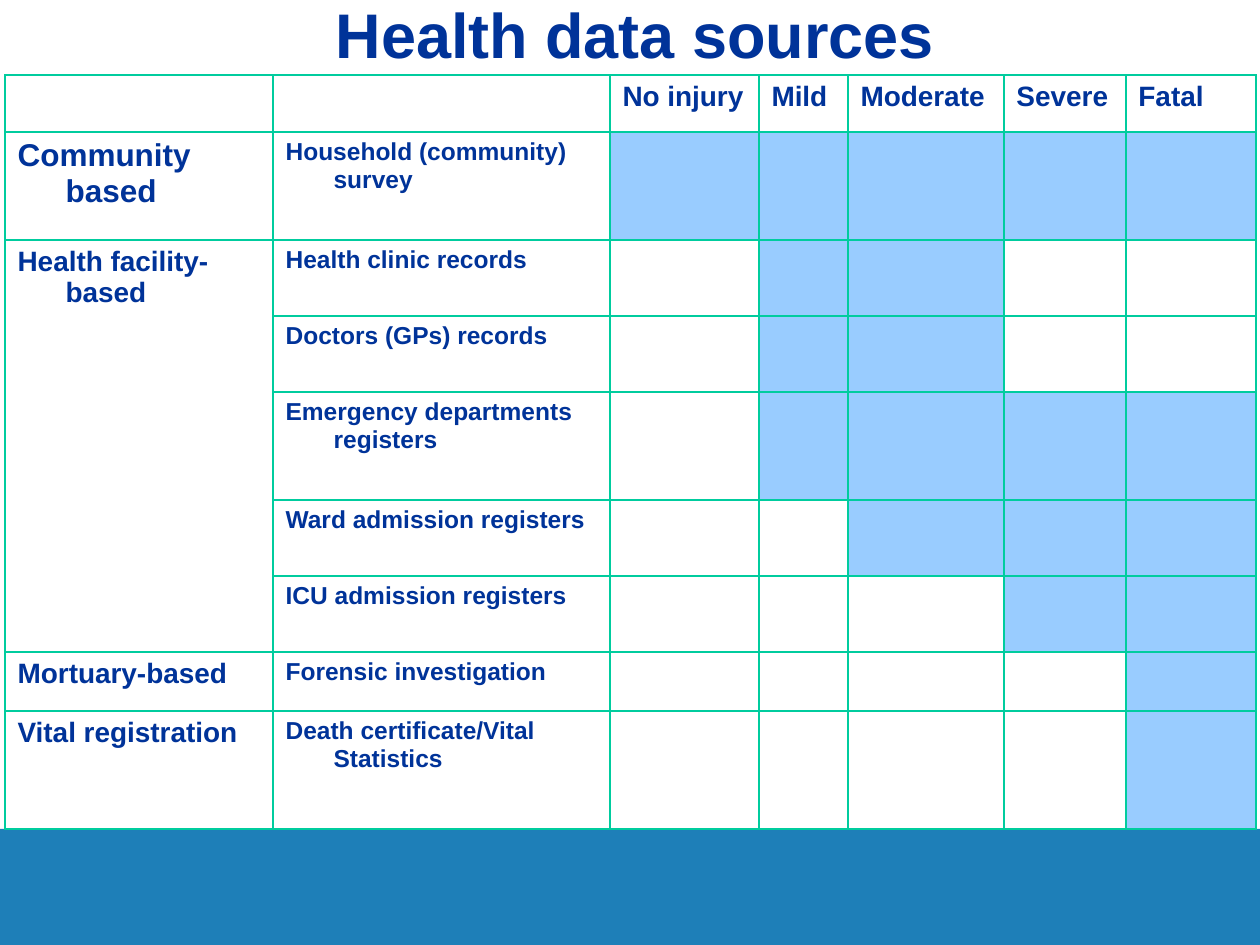
"""Build the health data sources slide with a severity coverage table."""
from lxml import etree
from pptx import Presentation
from pptx.dml.color import RGBColor
from pptx.enum.shapes import MSO_SHAPE as Shape
from pptx.enum.text import MSO_ANCHOR as Anchor, PP_ALIGN as Align
from pptx.oxml import parse_xml
from pptx.oxml.ns import nsdecls, qn
from pptx.util import Pt

PX = 914400 // 126
NAVY = RGBColor(0x00, 0x33, 0x99)
SKY = RGBColor(0x99, 0xCC, 0xFF)
BLUE = RGBColor(0x1E, 0x7F, 0xB8)
GREEN = RGBColor(0x00, 0xCC, 0x9E)

COLUMN_WIDTHS = [268, 337, 149, 89, 156, 122, 130]
ROW_HEIGHTS = [57, 108, 76, 76, 108, 76, 76, 59, 118]
SEVERITIES = ["No injury", "Mild", "Moderate", "Severe", "Fatal"]
SOURCES = [
    ("Community based", 18, "Household (community) survey", "No injury", "Fatal"),
    ("Health facility-based", 16, "Health clinic records", "Mild", "Moderate"),
    ("", 16, "Doctors (GPs) records", "Mild", "Moderate"),
    ("", 16, "Emergency departments registers", "Mild", "Fatal"),
    ("", 16, "Ward admission registers", "Moderate", "Fatal"),
    ("", 16, "ICU admission registers", "Severe", "Fatal"),
    ("Mortuary-based", 16, "Forensic investigation", "Fatal", "Fatal"),
    ("Vital registration", 16, "Death certificate/Vital Statistics", "Fatal", "Fatal"),
]


def write(frame, text, size=14, align=Align.LEFT, hanging=0):
    para = frame.paragraphs[0]
    para.alignment = align
    if hanging:
        props = para._p.get_or_add_pPr()
        props.set("marL", str(hanging * PX))
        props.set("indent", str(-hanging * PX))
    span = para.add_run()
    span.text = text
    span.font.name = "Arial"
    span.font.size = Pt(size)
    span.font.bold = True
    span.font.color.rgb = NAVY
    return span


deck = Presentation()
deck.slide_width, deck.slide_height = 1260 * PX, 945 * PX
page = deck.slides.add_slide(deck.slide_layouts[6])

band = page.shapes.add_shape(Shape.RECTANGLE, 0, 829 * PX, 1260 * PX, 116 * PX)
band.shadow.inherit = False
band.fill.solid()
band.fill.fore_color.rgb = BLUE
band.line.fill.background()

box = page.shapes.add_textbox(34 * PX, 0, 1202 * PX, 55 * PX)
frame = box.text_frame
frame.word_wrap = True
frame.vertical_anchor = Anchor.MIDDLE
frame.margin_left = frame.margin_right = frame.margin_bottom = 0
frame.margin_top = 11 * PX
title = write(frame, "Health data sources", size=36, align=Align.CENTER)
title._r.rPr.find(qn("a:solidFill")).addnext(parse_xml(
    f'<a:effectLst {nsdecls("a")}><a:outerShdw dist="35921" dir="2700000">'
    f'<a:srgbClr val="{SKY}"/></a:outerShdw></a:effectLst>'))

table = page.shapes.add_table(
    len(ROW_HEIGHTS), len(COLUMN_WIDTHS), 5 * PX, 75 * PX,
    sum(COLUMN_WIDTHS) * PX, sum(ROW_HEIGHTS) * PX).table
table.first_row = table.horz_banding = False
for column, width in zip(table.columns, COLUMN_WIDTHS):
    column.width = width * PX
for row, height in zip(table.rows, ROW_HEIGHTS):
    row.height = height * PX

for cell in table.iter_cells():
    cell.fill.background()
    props = cell._tc.get_or_add_tcPr()
    for position, side in enumerate(["lnL", "lnR", "lnT", "lnB"]):
        border = etree.Element(qn(f"a:{side}"), w=str(Pt(1)))
        fill = etree.SubElement(border, qn("a:solidFill"))
        etree.SubElement(fill, qn("a:srgbClr"), val=str(GREEN))
        props.insert(position, border)

for index, severity in enumerate(SEVERITIES, start=2):
    write(table.cell(0, index).text_frame, severity, size=16, hanging=48)

table.cell(2, 0).merge(table.cell(6, 0))
for index, (group, size, source, mildest, worst) in enumerate(SOURCES, start=1):
    if group:
        write(table.cell(index, 0).text_frame, group, size=size, hanging=48)
    write(table.cell(index, 1).text_frame, source, hanging=48)
    for covered in range(SEVERITIES.index(mildest), SEVERITIES.index(worst) + 1):
        cell = table.cell(index, covered + 2)
        cell.fill.solid()
        cell.fill.fore_color.rgb = SKY

deck.save("out.pptx")
